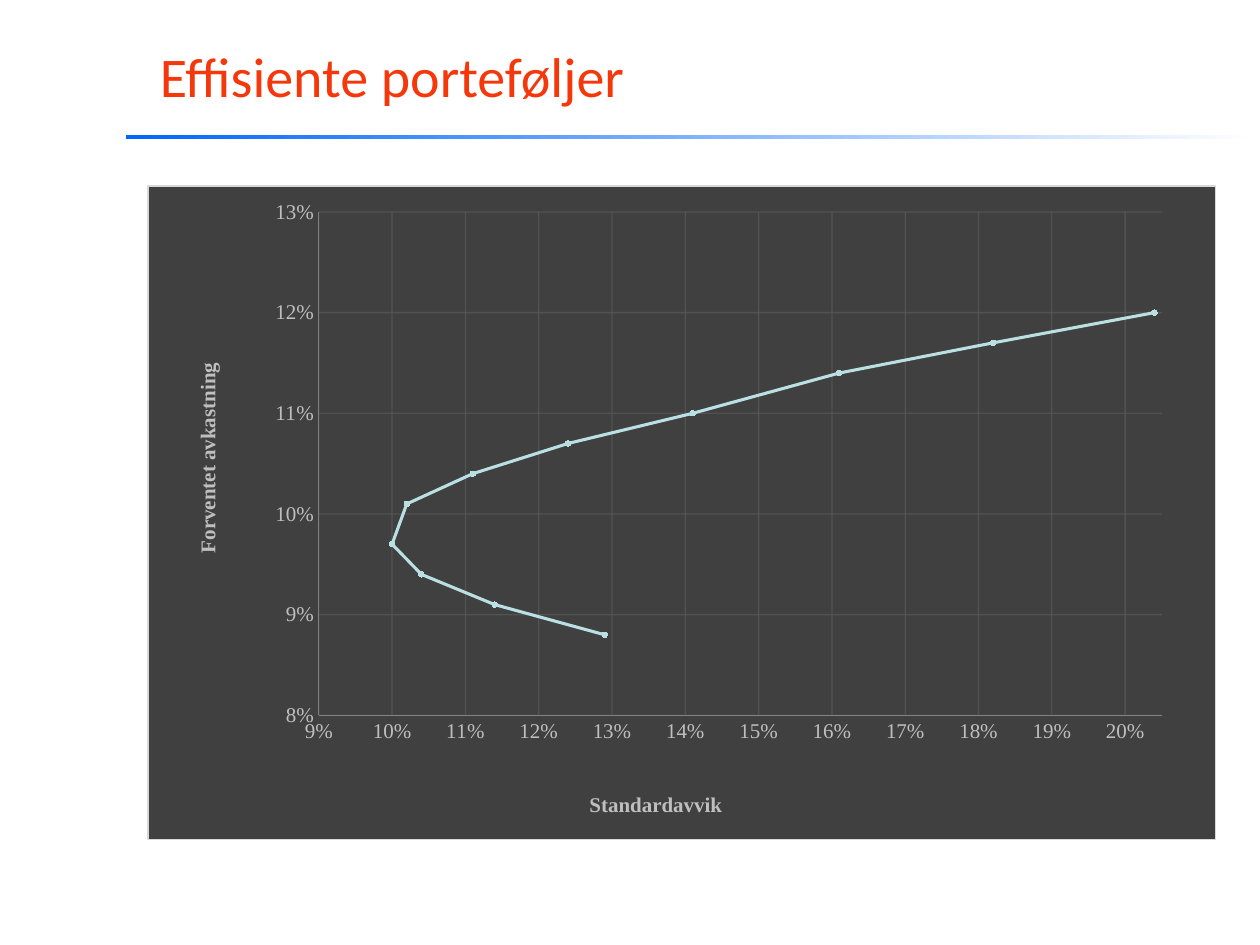
from lxml import etree
from pptx import Presentation
from pptx.chart.data import XyChartData
from pptx.dml.color import RGBColor
from pptx.enum.chart import XL_CHART_TYPE, XL_MARKER_STYLE, XL_TICK_MARK
from pptx.enum.shapes import MSO_SHAPE
from pptx.enum.text import MSO_ANCHOR
from pptx.oxml import parse_xml
from pptx.oxml.ns import nsdecls, qn
from pptx.util import Inches, Pt

HEADING = "Effisiente porteføljer"
# (standard deviation, expected return)
PORTFOLIOS = [
    (0.199, 0.12), (0.177, 0.117), (0.156, 0.114), (0.136, 0.11),
    (0.119, 0.107), (0.106, 0.104), (0.097, 0.101), (0.095, 0.097),
    (0.099, 0.094), (0.109, 0.091), (0.124, 0.088),
]
RISK_SCALE = {"minimum_scale": 0.085, "maximum_scale": 0.2, "major_unit": 0.01}
RETURN_SCALE = {"minimum_scale": 0.08, "maximum_scale": 0.13, "major_unit": 0.01}

# Shares of the chart's width and height
PLOT_AREA = {"x": 0.16, "y": 0.04, "w": 0.79, "h": 0.77}
RISK_TITLE_SPOT = {"x": 0.41, "y": 0.92}
RETURN_TITLE_SPOT = {"x": 0.04, "y": 0.265}

RED = RGBColor(0xF4, 0x38, 0x0C)
BLUE = RGBColor(0x00, 0x66, 0xFF)
WHITE = RGBColor(0xFF, 0xFF, 0xFF)
LABEL_GRAY = RGBColor(0xBF, 0xBF, 0xBF)
AXIS_GRAY = RGBColor(0x80, 0x80, 0x80)
GRID_GRAY = RGBColor(0x59, 0x59, 0x59)
PANEL_GRAY = RGBColor(0x40, 0x40, 0x40)
BORDER_GRAY = RGBColor(0xD9, 0xD9, 0xD9)
CURVE = RGBColor(0xBB, 0xE0, 0xE3)
MARKER = RGBColor(0xD6, 0xEC, 0xEE)

SLIDE_W, SLIDE_H = Inches(10), Inches(7.5)
RULE_LEFT, RULE_TOP = Inches(1), Inches(1.07)
CONTENT_LEFT = Inches(1.17)


def set_format(target, values):
    for name, value in values.items():
        setattr(target, name, value)


def style_font(font, size, color, bold=False, face="Times New Roman"):
    set_format(font, {"size": Pt(size), "bold": bold, "name": face})
    font.color.rgb = color


def style_line(line, color, width=0.75):
    line.color.rgb = color
    line.width = Pt(width)


def place(parent, index, spot, inner=False):
    """Give a chart part a manual layout, in shares of the chart."""
    for old in parent.findall(qn("c:layout")):
        parent.remove(old)
    layout = parse_xml(f"<c:layout {nsdecls('c')}><c:manualLayout/></c:layout>")
    parts = {"layoutTarget": "inner"} if inner else {}
    parts |= {"xMode": "edge", "yMode": "edge"} | spot
    for tag, value in parts.items():
        etree.SubElement(layout[0], qn(f"c:{tag}")).set("val", str(value))
    parent.insert(index, layout)


def style_axis(axis, title, scale, title_spot):
    set_format(axis, scale | {
        "has_major_gridlines": True, "has_title": True,
        "major_tick_mark": XL_TICK_MARK.NONE,
        "minor_tick_mark": XL_TICK_MARK.NONE,
    })
    set_format(axis.tick_labels, {"number_format": "0%", "number_format_is_linked": False})
    style_font(axis.tick_labels.font, 12, LABEL_GRAY)
    style_line(axis.format.line, AXIS_GRAY)

    grid = axis.major_gridlines
    style_line(grid.format.line, GRID_GRAY)
    grid_color = next(grid._xAx.find(qn("c:majorGridlines")).iter(qn("a:srgbClr")))
    etree.SubElement(grid_color, qn("a:alpha")).set("val", "75000")

    paragraph = axis.axis_title.text_frame.paragraphs[0]
    run = paragraph.add_run()
    run.text = title
    style_font(run.font, 12, LABEL_GRAY, bold=True)
    place(axis.axis_title._element, 1, title_spot)


def add_heading(slide):
    rule = slide.shapes.add_shape(
        MSO_SHAPE.RECTANGLE, RULE_LEFT, RULE_TOP, SLIDE_W - RULE_LEFT, Inches(0.03))
    rule.shadow.inherit = False
    rule.line.fill.background()
    rule.fill.gradient()
    rule.fill.gradient_angle = 0
    for stop, color in zip(rule.fill.gradient_stops, (BLUE, WHITE)):
        stop.color.rgb = color

    heading = slide.shapes.add_textbox(
        CONTENT_LEFT, Inches(0.13), SLIDE_W - CONTENT_LEFT, Inches(0.94))
    frame = heading.text_frame
    set_format(frame, {"word_wrap": True, "vertical_anchor": MSO_ANCHOR.MIDDLE})
    run = frame.paragraphs[0].add_run()
    run.text = HEADING
    style_font(run.font, 32, RED, face="Calibri")


def add_frontier_chart(slide):
    data = XyChartData(number_format="0%")
    frontier = data.add_series("Series 1")
    for risk, expected_return in PORTFOLIOS:
        frontier.add_data_point(risk, expected_return)
    chart = slide.shapes.add_chart(
        XL_CHART_TYPE.XY_SCATTER_SMOOTH, CONTENT_LEFT, Inches(1.47),
        Inches(8.48), Inches(5.2), data).chart
    set_format(chart, {"has_title": False, "has_legend": False})
    style_font(chart.font, 10, LABEL_GRAY)
    chart.plots[0].vary_by_categories = False

    style_axis(chart.category_axis, "Standardavvik", RISK_SCALE, RISK_TITLE_SPOT)
    style_axis(chart.value_axis, "Forventet avkastning", RETURN_SCALE, RETURN_TITLE_SPOT)

    curve = chart.plots[0].series[0]
    curve.smooth = True
    style_line(curve.format.line, CURVE, 1.75)
    set_format(curve.marker, {"style": XL_MARKER_STYLE.CIRCLE, "size": 3})
    curve.marker.format.fill.solid()
    curve.marker.format.fill.fore_color.rgb = MARKER
    style_line(curve.marker.format.line, CURVE)

    chart_part = chart._chartSpace.find(qn("c:chart"))
    place(chart_part.find(qn("c:plotArea")), 0, PLOT_AREA, inner=True)
    chart_part.addnext(parse_xml(
        f'<c:spPr {nsdecls("c", "a")}>'
        f'<a:solidFill><a:srgbClr val="{PANEL_GRAY}"/></a:solidFill>'
        f'<a:ln w="{Pt(0.75)}"><a:solidFill><a:srgbClr val="{BORDER_GRAY}"/>'
        '</a:solidFill></a:ln></c:spPr>'))


def main():
    deck = Presentation()
    set_format(deck, {"slide_width": SLIDE_W, "slide_height": SLIDE_H})
    slide = deck.slides.add_slide(deck.slide_layouts[6])
    add_heading(slide)
    add_frontier_chart(slide)
    deck.save("out.pptx")


if __name__ == "__main__":
    main()
